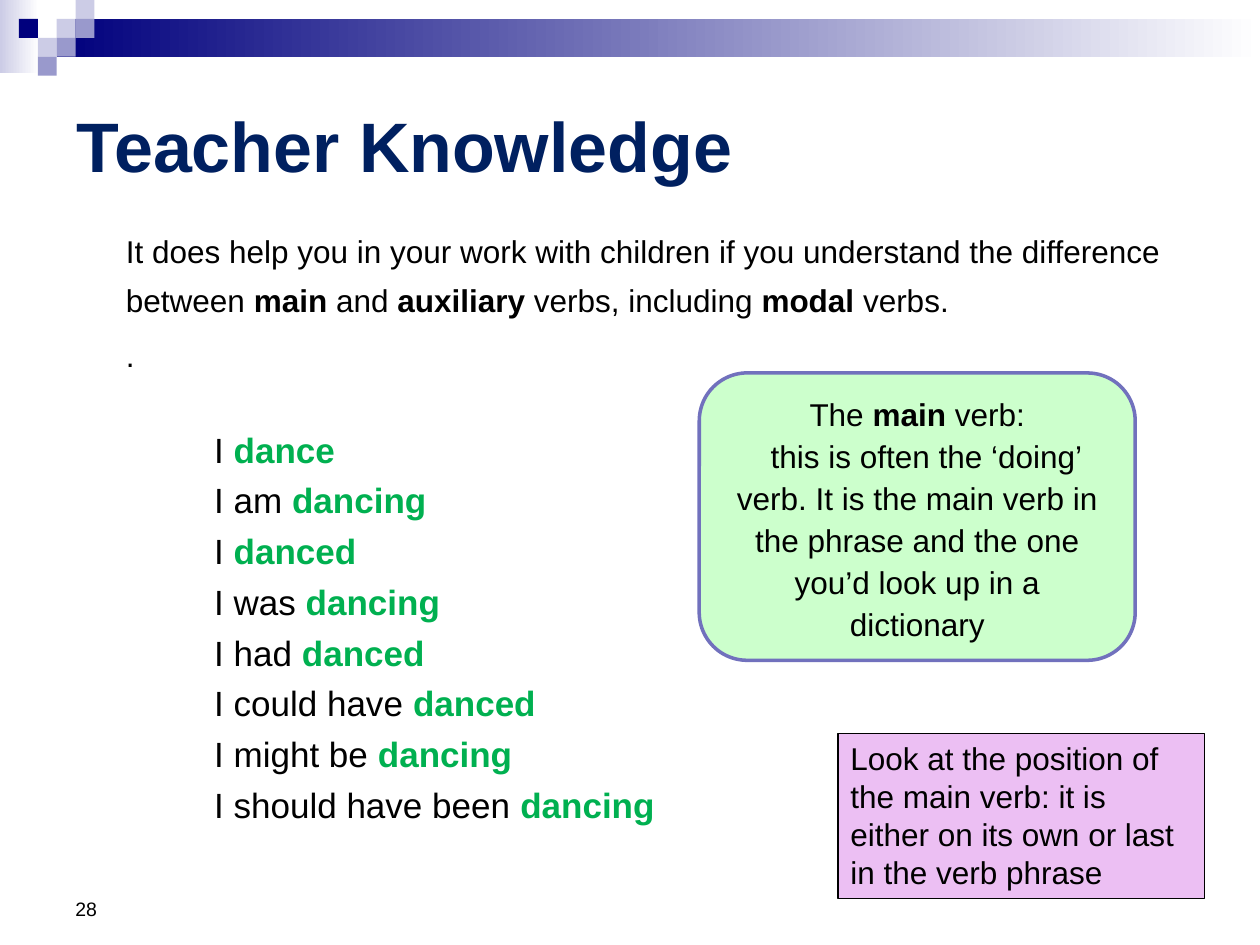
from pptx import Presentation
from pptx.dml.color import RGBColor
from pptx.enum.shapes import MSO_SHAPE
from pptx.enum.text import MSO_ANCHOR, PP_ALIGN
from pptx.util import Pt

NAVY = RGBColor(0x00, 0x00, 0x7D)
TITLE = RGBColor(0x00, 0x20, 0x60)
PALE = RGBColor(0xCC, 0xCC, 0xE6)
MID = RGBColor(0x99, 0x99, 0xCC)
EDGE = RGBColor(0x71, 0x71, 0xBD)
MINT = RGBColor(0xCC, 0xFF, 0xCC)
PINK = RGBColor(0xEC, 0xBF, 0xF3)
GREEN = RGBColor(0x00, 0xB0, 0x50)
BLACK = RGBColor(0, 0, 0)
WHITE = RGBColor(0xFF, 0xFF, 0xFF)


def add_box(slide, box, fill, edge=None, width=1, kind=MSO_SHAPE.RECTANGLE):
    shape = slide.shapes.add_shape(kind, *map(Pt, box))
    shape.shadow.inherit = False
    shape.fill.solid()
    shape.fill.fore_color.rgb = fill
    if edge is None:
        shape.line.fill.background()
    else:
        shape.line.color.rgb = edge
        shape.line.width = Pt(width)
    return shape


def add_fade(slide, box, start):
    shape = add_box(slide, box, start)
    shape.fill.gradient()
    shape.fill.gradient_angle = 0
    for stop, color, place in zip(shape.fill.gradient_stops, (start, WHITE), (0, 1)):
        stop.color.rgb = color
        stop.position = place


def add_text(slide, box, anchor=MSO_ANCHOR.TOP):
    frame = slide.shapes.add_textbox(*map(Pt, box)).text_frame
    frame.word_wrap = True
    frame.vertical_anchor = anchor
    return frame


def write(frame, runs, size=18, first=False, **form):
    """Add one paragraph; each run is (text, bold, color)."""
    para = frame.paragraphs[0] if first else frame.add_paragraph()
    para.alignment = PP_ALIGN.LEFT
    for name, value in form.items():
        setattr(para, name, value)
    for text, bold, color in runs:
        run = para.add_run()
        run.text = text
        look = {"name": "Arial", "size": Pt(size), "bold": bold}
        for name, value in look.items():
            setattr(run.font, name, value)
        run.font.color.rgb = color
    return para


def mix(*parts):
    """Black runs, plain and bold by turns."""
    return [(part, i % 2 == 1, BLACK) for i, part in enumerate(parts)]


def add_banner(slide, box):
    left, top, width, height = box
    side = 10.8
    add_fade(slide, (left, top, 22.3, height), PALE)
    add_fade(slide, (left + 32.4, top + side, width - 32.4, 21.6), NAVY)
    # Squares by column and row
    tiles = [(3, 1, PALE), (4, 0, PALE), (4, 1, MID), (2, 2, PALE),
             (1, 1, NAVY), (3, 2, MID), (2, 3, MID)]
    for col, row, color in tiles:
        spot = (left + col * side, top + row * side, side, side)
        add_box(slide, spot, color)


def add_body(slide, box):
    frame = add_text(slide, box)
    left, top, width, height = box
    # Introduction
    frame.margin_left = Pt(13.7)
    intro = mix("It does help you in your work with children if you understand "
                "the difference between ", "main", " and ", "auxiliary ",
                "verbs, including ", "modal", " verbs.")
    write(frame, intro, first=True, line_spacing=Pt(28))
    write(frame, mix("."), line_spacing=Pt(28), space_before=Pt(3.6))
    # Verb phrases, main verb in green
    pairs = [("I ", "dance"), ("I am ", "dancing"), ("I ", "danced"),
             ("I was ", "dancing"), ("I had ", "danced"),
             ("I could have ", "danced"), ("I might be ", "dancing"),
             ("I should have been ", "dancing")]
    for i, (lead, verb) in enumerate(pairs):
        para = write(frame, [(lead, False, BLACK), (verb, True, GREEN)], 20,
                     space_before=Pt(5 if i else 31))
        para._p.get_or_add_pPr().set("marL", str(Pt(50.4)))


def add_callout(slide, box):
    shape = add_box(slide, box, MINT, EDGE, 2, MSO_SHAPE.ROUNDED_RECTANGLE)
    frame = shape.text_frame
    frame.word_wrap = True
    frame.vertical_anchor = MSO_ANCHOR.MIDDLE
    form = {"alignment": PP_ALIGN.CENTER, "line_spacing": Pt(24)}
    write(frame, mix("The ", "main", " verb:"), first=True, **form)
    write(frame, mix("  this is often the ‘doing’ verb. It is the main verb in "
                     "the phrase and the one you’d look up in a dictionary"), **form)


def add_note(slide, box):
    frame = add_box(slide, box, PINK, BLACK, 0.75).text_frame
    frame.word_wrap = True
    frame.vertical_anchor = MSO_ANCHOR.TOP
    write(frame, mix("Look at the position of the main verb: it is either on "
                     "its own or last in the verb phrase"), first=True)


def main():
    deck = Presentation()
    deck.slide_width, deck.slide_height = Pt(720), Pt(540)
    slide = deck.slides.add_slide(deck.slide_layouts[6])
    add_banner(slide, (0, 0, 720, 41.8))
    # Title
    head = add_text(slide, (36.7, 37.4, 621.4, 90), MSO_ANCHOR.MIDDLE)
    write(head, [("Teacher Knowledge", True, TITLE)], 40, True)
    add_body(slide, (58.3, 122.4, 629.3, 378))
    # Page number
    page = add_text(slide, (36, 491.8, 167.8, 37.4), MSO_ANCHOR.BOTTOM)
    write(page, mix("28"), 11.1, True)
    add_callout(slide, (399.6, 213.1, 249.1, 164.2))
    add_note(slide, (478.8, 419, 209.5, 94.3))
    deck.save("out.pptx")


if __name__ == "__main__":
    main()
